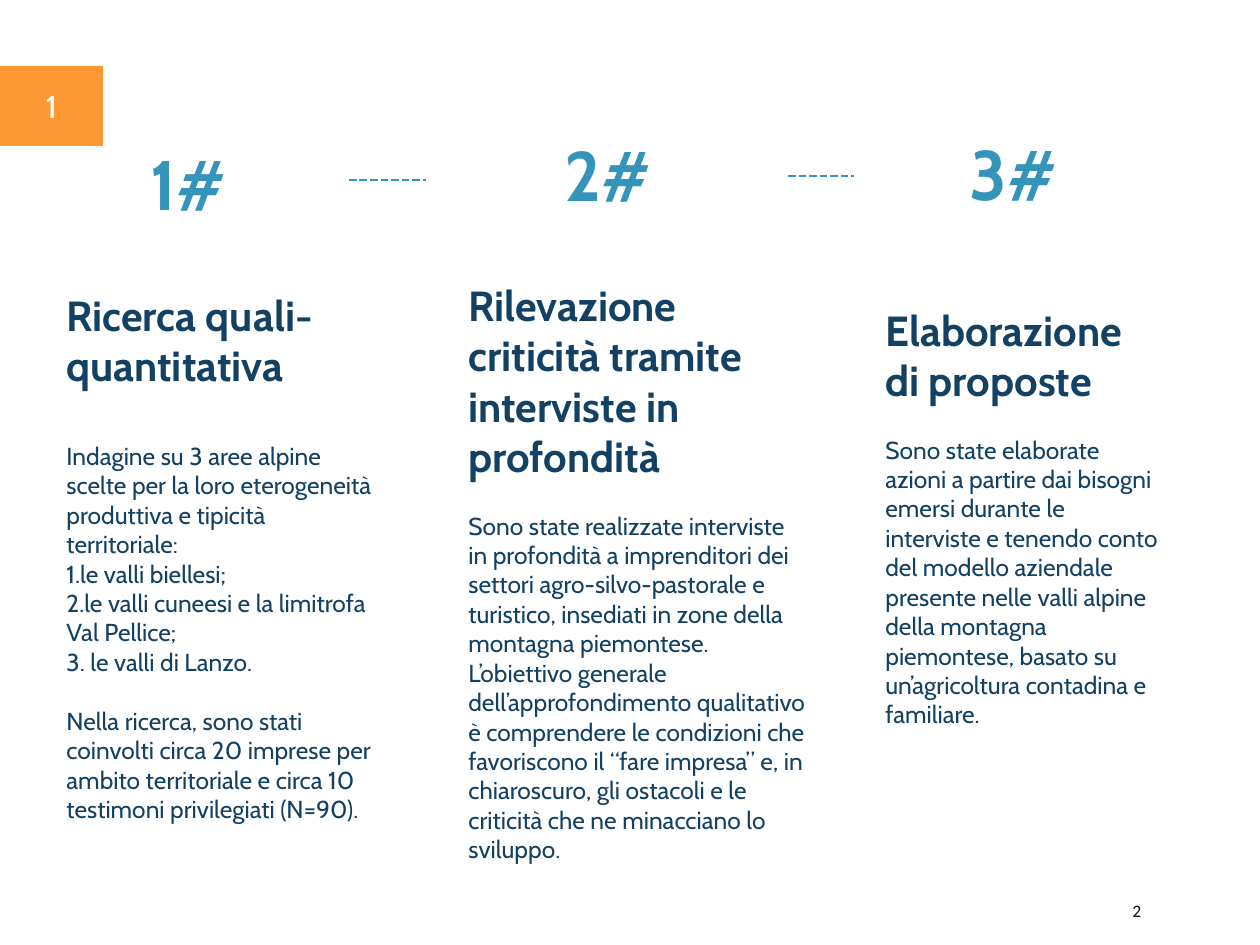
from dataclasses import dataclass

from lxml import etree
from pptx import Presentation
from pptx.dml.color import RGBColor
from pptx.enum.dml import MSO_LINE
from pptx.enum.shapes import MSO_CONNECTOR, MSO_SHAPE
from pptx.enum.text import MSO_ANCHOR, PP_ALIGN
from pptx.oxml.ns import qn
from pptx.util import Emu, Pt

RECT = MSO_SHAPE.RECTANGLE
STRAIGHT = MSO_CONNECTOR.STRAIGHT
DASH = MSO_LINE.SQUARE_DOT
MIDDLE = MSO_ANCHOR.MIDDLE
LEFT, CENTER = PP_ALIGN.LEFT, PP_ALIGN.CENTER


@dataclass(frozen=True)
class Theme:
    """Colours, fonts and type sizes of the slide."""
    white: str = "FFFFFF"
    blue: str = "3494BA"
    navy: str = "134163"
    orange: str = "FF9933"
    black: str = "0D0D0D"
    font: str = "Cabin"
    plain: str = "Calibri"
    mark: int = 40
    head: int = 24
    body: int = 14
    tag: int = 18
    page: int = 10


THEME = Theme()

STEPS = [
    ("1#", (89, 84, 199, 198), (54, 282, 331, 549), 0,
     "Ricerca quali-quantitativa",
     [(29, "Indagine su 3 aree alpine scelte per la loro eterogeneità "
           "produttiva e tipicità territoriale:"),
      (0, "1.le valli biellesi;"),
      (0, "2.le valli cuneesi e la limitrofa Val Pellice;"),
      (0, "3. le valli di Lanzo."),
      (17, "Nella ricerca, sono stati coinvolti circa 20 imprese per ambito "
           "territoriale e circa 10 testimoni privilegiati (N=90).")]),
    ("2#", (509, 77, 197, 193), (456, 316, 362, 595), 84,
     "Rilevazione criticità tramite interviste in profondità",
     [(17, "Sono state realizzate interviste in profondità a imprenditori dei "
           "settori agro-silvo-pastorale e turistico, insediati in zone della "
           "montagna piemontese."),
      (0, "L’obiettivo generale dell’approfondimento qualitativo è comprendere "
          "le condizioni che favoriscono il “fare impresa” e, in chiaroscuro, "
          "gli ostacoli e le criticità che ne minacciano lo sviluppo.")]),
    ("3#", (916, 73, 195, 199), (873, 277, 302, 479), 0,
     "Elaborazione di proposte",
     [(17, "Sono state elaborate azioni a partire dai bisogni emersi durante le "
           "interviste e tenendo conto del modello aziendale presente nelle "
           "valli alpine della montagna piemontese, basato su un’agricoltura "
           "contadina e familiare.")]),
]
LINKS = [(349, 180, 77), (788, 176, 66)]


def px(count):
    """Turn px into EMU."""
    return Emu(round(count * 914400 / 126))


def rgb(code):
    """Turn a hex code into a colour."""
    return RGBColor.from_string(code)


def panel(slide, box, fill):
    """Add a plain filled rectangle and return its text frame."""
    shape = slide.shapes.add_shape(RECT, *map(px, box))
    shape.shadow.inherit = False
    shape.fill.solid()
    shape.fill.fore_color.rgb = rgb(fill)
    shape.line.fill.background()
    shape.text_frame.word_wrap = True
    shape.text_frame.vertical_anchor = MIDDLE
    return shape.text_frame


def write(para, text, size, color, bold=False, font=THEME.font,
          align=LEFT, before=0):
    """Add one styled run to a paragraph."""
    para.alignment = align
    para.space_before = Pt(before)
    run = para.add_run()
    run.text = text
    run.font.name = font
    run.font.size = Pt(size)
    run.font.bold = bold
    run.font.color.rgb = rgb(color)


def label(slide, box, text, size, color, fill, bold=False):
    """Add a rectangle with one centred line."""
    frame = panel(slide, box, fill)
    write(frame.paragraphs[0], text, size, color, bold, align=CENTER)


def column(slide, box, lift, title, parts):
    """Add a heading with its body paragraphs."""
    frame = panel(slide, box, THEME.white)
    frame.margin_bottom += px(lift)
    write(frame.paragraphs[0], title, THEME.head, THEME.navy, True)
    for gap, text in parts:
        write(frame.add_paragraph(), text, THEME.body, THEME.navy, before=gap)


def link(slide, left, top, width):
    """Add a level dashed line."""
    ends = map(px, (left, top, left + width, top))
    line = slide.shapes.add_connector(STRAIGHT, *ends)
    line.line.color.rgb = rgb(THEME.blue)
    line.line.width = Pt(1.5)
    line.line.dash_style = DASH
    etree.SubElement(line._element.spPr, qn("a:effectLst"))


def footer(slide, box, text):
    """Add the page number."""
    frame = slide.shapes.add_textbox(*map(px, box)).text_frame
    frame.word_wrap = True
    frame.vertical_anchor = MIDDLE
    write(frame.paragraphs[0], text, THEME.page, THEME.black, font=THEME.plain)


def main():
    """Build and save the slide."""
    deck = Presentation()
    deck.slide_width, deck.slide_height = px(1260), px(945)
    slide = deck.slides.add_slide(deck.slide_layouts[6])
    for mark, spot, *_ in STEPS:
        label(slide, spot, mark, THEME.mark, THEME.blue, THEME.white, True)
    for ends in LINKS:
        link(slide, *ends)
    for _, _, box, lift, title, parts in STEPS:
        column(slide, box, lift, title, parts)
    footer(slide, (1120, 892, 101, 38), "2")
    label(slide, (0, 66, 103, 80), "1", THEME.tag, THEME.white, THEME.orange)
    deck.save("out.pptx")


if __name__ == "__main__":
    main()
